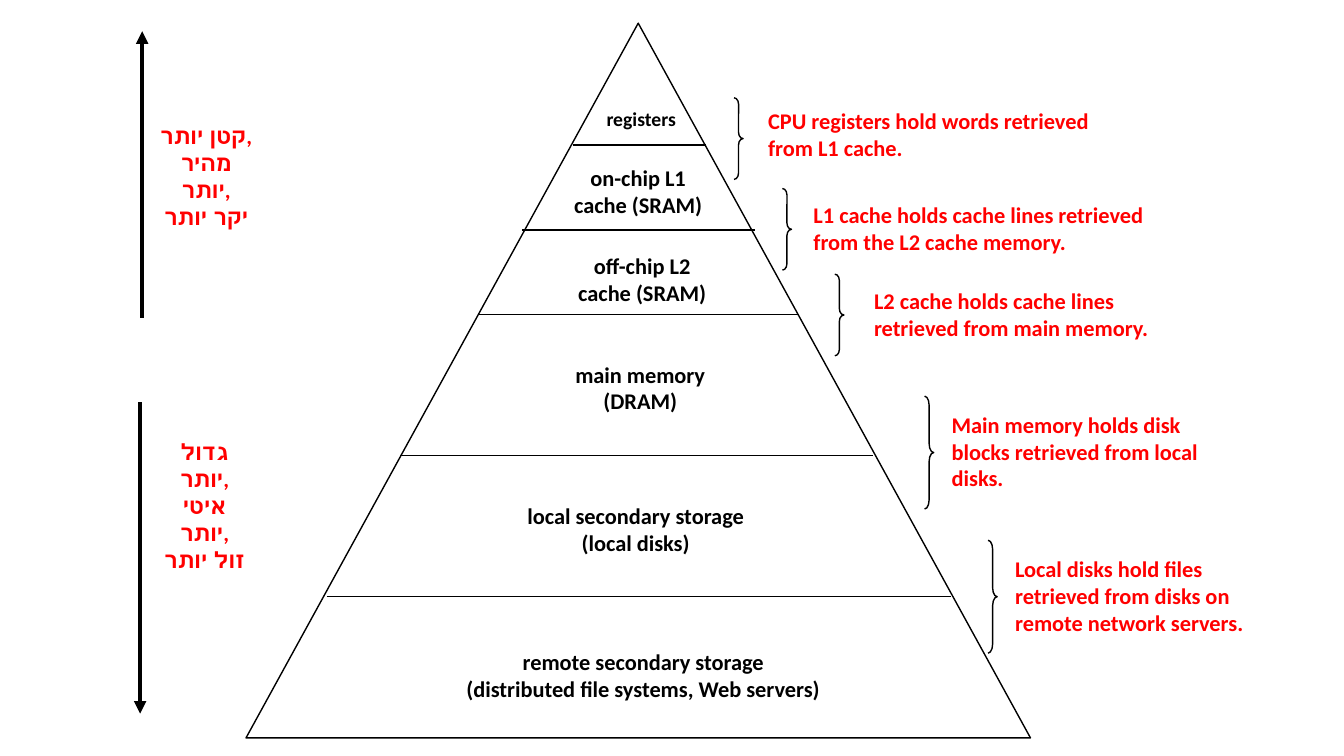
from lxml import etree
from pptx import Presentation
from pptx.dml.color import RGBColor
from pptx.enum.shapes import MSO_CONNECTOR, MSO_SHAPE
from pptx.enum.text import MSO_ANCHOR, PP_ALIGN
from pptx.oxml.ns import qn
from pptx.util import Pt

PX = 9144
LEFT, CENTER = PP_ALIGN.LEFT, PP_ALIGN.CENTER
MIDDLE = MSO_ANCHOR.MIDDLE
STRAIGHT = MSO_CONNECTOR.STRAIGHT
CONE, BRACE = MSO_SHAPE.ISOSCELES_TRIANGLE, MSO_SHAPE.RIGHT_BRACE
HEX = {"ink": "000000", "note": "FF0000"}

LEVELS = [
    (585, 98, 102, 40, 14, "registers"),
    (548, 151, 170, 77, 16, "on-chip L1\ncache (SRAM)"),
    (552, 238, 170, 77, 16, "off-chip L2\ncache (SRAM)"),
    (549, 346, 172, 77, 16, "main memory\n(DRAM)"),
    (495, 486, 271, 77, 16, "local secondary storage\n(local disks)"),
    (424, 631, 428, 77, 16,
     "remote secondary storage\n(distributed file systems, Web servers)"),
]
RUNGS = [(568, 700, 144), (518, 749, 228), (474, 792, 312),
         (397, 866, 452), (324, 943, 592)]
NOTES = [
    (752, 101, 364, 64, "CPU registers hold words retrieved from L1 cache."),
    (797, 194, 354, 64,
     "L1 cache holds cache lines retrieved from the L2 cache memory."),
    (857, 280, 328, 64,
     "L2 cache holds cache lines retrieved from main memory."),
    (934, 402, 345, 91,
     "Main memory holds disk\nblocks retrieved from local\ndisks."),
    (997, 545, 257, 91,
     "Local disks hold files retrieved from disks on remote network servers."),
]
BRACES = [(728, 97, 81, 0.7), (776, 187, 81, 0.7), (828, 272, 81, 0.7),
          (917, 393, 112, 1), (980, 536, 112, 1)]
TRENDS = [
    (144, 120, 121, "קטן יותר,\nמהיר יותר,\nיקר יותר", 141, 315, 31),
    (146, 447, 114, "גדול יותר,\nאיטי יותר,\nזול יותר", 139, 399, 708),
]


class Board:
    """Draws styled elements on one slide."""

    def __init__(self, deck):
        self.font = "Calibri"
        self.slide = deck.slides.add_slide(deck.slide_layouts[6])
        self.shapes = self.slide.shapes

    def color(self, name):
        return RGBColor.from_string(HEX[name])

    def stroke(self, line, width):
        line.color.rgb = self.color("ink")
        line.width = Pt(width)

    def shape(self, kind, x, y, w, h, *adjust):
        item = self.shapes.add_shape(kind, x * PX, y * PX, w * PX, h * PX)
        item.shadow.inherit = False
        item.fill.background()
        self.stroke(item.line, 1)
        for i, value in enumerate(adjust):
            item.adjustments[i] = value

    def line(self, x1, y1, x2, y2, width=1, arrow=False):
        item = self.shapes.add_connector(
            STRAIGHT, x1 * PX, y1 * PX, x2 * PX, y2 * PX)
        self.stroke(item.line, width)
        props = item._element.spPr
        if arrow:
            etree.SubElement(props.find(qn("a:ln")), qn("a:tailEnd"),
                             type="triangle")
        etree.SubElement(props, qn("a:effectLst"))

    def text(self, words, x, y, w, h, size=16, color="ink", align=CENTER):
        frame = self.shapes.add_textbox(
            x * PX, y * PX, w * PX, h * PX).text_frame
        frame.word_wrap = True
        frame.vertical_anchor = MIDDLE
        frame.text = words
        for para in frame.paragraphs:
            para.alignment = align
            for run in para.runs:
                run.font.name = self.font
                run.font.size = Pt(size)
                run.font.bold = True
                run.font.color.rgb = self.color(color)


def main():
    deck = Presentation()
    deck.slide_width, deck.slide_height = 1333 * PX, 750 * PX
    board = Board(deck)
    board.shape(CONE, 244, 23, 778, 709)
    for x1, x2, y in RUNGS:
        board.line(x1, y, x2, y)
    for x, y, w, h, size, words in LEVELS:
        board.text(words, x, y, w, h, size=size)
    for x, y, h, curl in BRACES:
        board.shape(BRACE, x, y, 9, h, curl, 0.5)
    for x, y, w, h, words in NOTES:
        board.text(words, x, y, w, h, color="note", align=LEFT)
    for x, y, w, words, axis, start, end in TRENDS:
        board.text(words, x, y, w, 109, color="note")
        board.line(axis, start, axis, end, width=3, arrow=True)
    deck.save("out.pptx")


if __name__ == "__main__":
    main()
